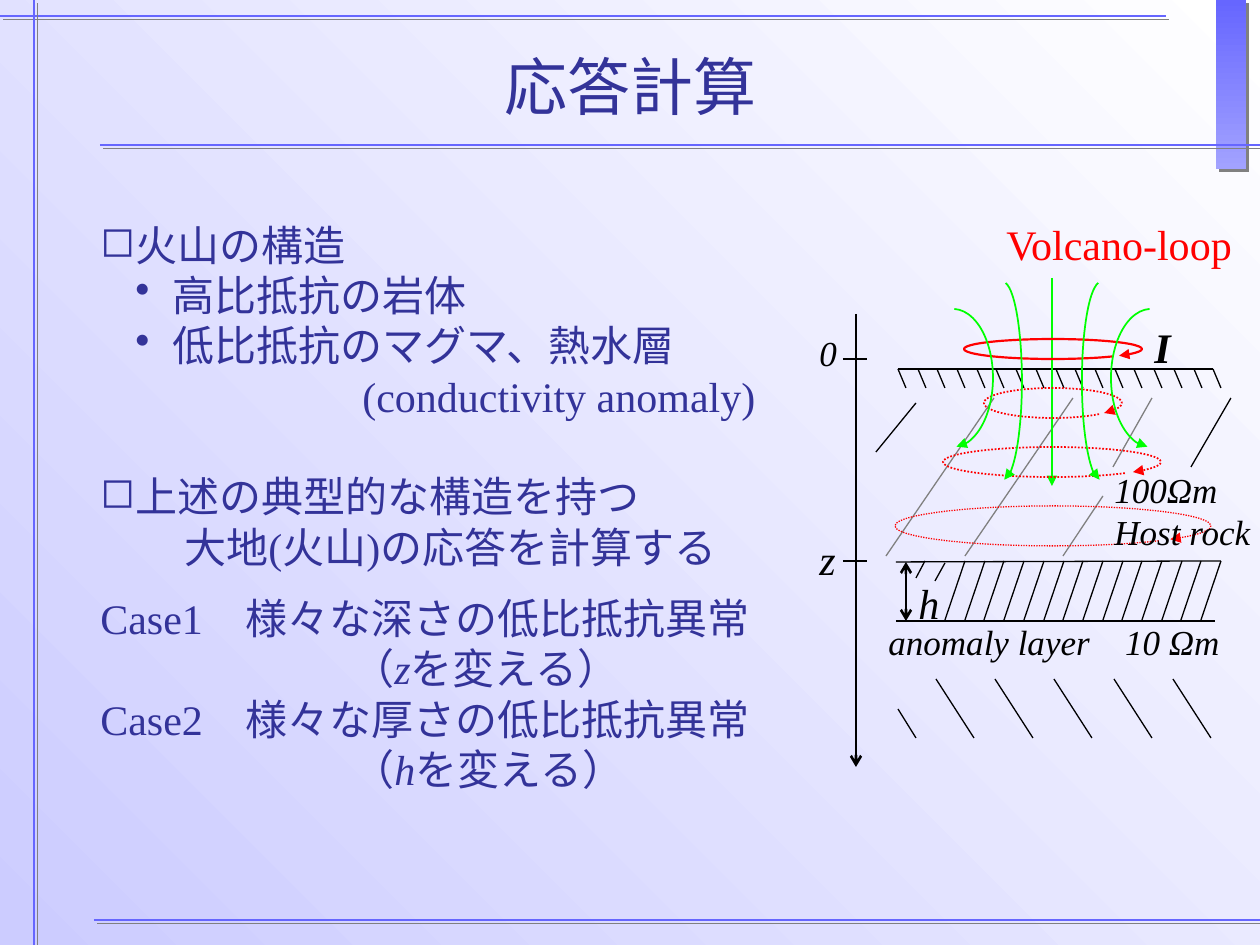
import math

import lxml.etree
import pptx
import pptx.util
from pptx.dml.color import RGBColor
from pptx.enum.dml import MSO_LINE
from pptx.enum.shapes import MSO_CONNECTOR, MSO_SHAPE
from pptx.enum.text import MSO_ANCHOR, PP_ALIGN
from pptx.oxml.ns import qn

PX = 914400 // 126
THEME = {
    "ink": RGBColor(0x33, 0x33, 0x99),
    "black": RGBColor(0, 0, 0),
    "gray": RGBColor(0x80, 0x80, 0x80),
    "red": RGBColor(0xFF, 0, 0),
    "green": RGBColor(0, 0xFF, 0),
    "accent": RGBColor(0x66, 0x66, 0xFF),
    "accent_light": RGBColor(0xA2, 0xA2, 0xFF),
    "mist": RGBColor(0xCC, 0xCC, 0xFF),
    "white": RGBColor(0xFF, 0xFF, 0xFF),
    "title": 36, "body": 24, "label": 20,
    "title_font": "Arial", "font": "Times New Roman",
}


def finish(shape, colour=None, width=0.75, dash=None, head=None, tail=None, shadow=False):
    """Style an outline, its arrowheads and its shadow."""
    if colour:
        shape.line.color.rgb = THEME[colour]
        shape.line.width = pptx.util.Pt(width)
        if dash:
            shape.line.dash_style = dash
    else:
        shape.line.fill.background()
    properties = shape._element.spPr
    outline = properties.find(qn("a:ln"))
    for end, kind in (("a:headEnd", head), ("a:tailEnd", tail)):
        if kind:
            lxml.etree.SubElement(outline, qn(end), type=kind)
    effects = lxml.etree.SubElement(properties, qn("a:effectLst"))
    if shadow:
        cast = lxml.etree.SubElement(effects, qn("a:outerShdw"), blurRad="0", dist="35921",
                                     dir="2700000", algn="ctr", rotWithShape="0")
        lxml.etree.SubElement(cast, qn("a:srgbClr"), val=str(THEME["gray"]))


def write(paragraph, text, **values):
    """Add a run in the slide's font with the given format values."""
    run = paragraph.add_run()
    run.text = text
    colour = values.pop("colour", "ink")
    run.font.color.rgb = THEME[colour]
    size = values.pop("size", "body")
    for name, value in {"name": THEME["font"], "size": pptx.util.Pt(THEME[size]), **values}.items():
        setattr(run.font, name, value)


deck = pptx.Presentation()
deck.slide_width, deck.slide_height = 1260 * PX, 945 * PX
slide = deck.slides.add_slide(deck.slide_layouts[5])
shapes = slide.shapes

# Background and frame
corner_bar = shapes.add_shape(MSO_SHAPE.RECTANGLE, 1216 * PX, 0, 30 * PX, 169 * PX)
for fill, angle, colours in (
    (slide.background.fill, 45, ("mist", "white")),
    (corner_bar.fill, 270, ("accent", "accent_light")),
):
    fill.gradient()
    fill.gradient_angle = angle
    for stop, position, colour in zip(fill.gradient_stops, (0, 1), colours):
        stop.position = position
        stop.color.rgb = THEME[colour]
finish(corner_bar, shadow=True)

# Title
title = shapes.title
for name, value in {"left": 63, "top": 6, "width": 1134, "height": 158}.items():
    setattr(title, name, value * PX)
title.text_frame.vertical_anchor = MSO_ANCHOR.MIDDLE
heading = title.text_frame.paragraphs[0]
heading.alignment = PP_ALIGN.CENTER
write(heading, "応答計算", size="title", name=THEME["title_font"])

# Outline: runs, left margin, bullet, bullet hang, space before
outline_text = [
    (["火山の構造"], 30, "◻", 30, 0),
    (["高比抵抗の岩体"], 72, "•", 37, 0),
    (["低比抵抗のマグマ、熱水層"], 72, "•", 37, 0),
    (["(conductivity anomaly)"], 262, None, 0, 0),
    (["上述の典型的な構造を持つ"], 30, "◻", 30, 28.5),
    (["大地(火山)の応答を計算する"], 84, None, 0, 0),
    (["Case1　様々な深さの低比抵抗異常"], 0, None, 0, 12),
    (["（", "z", "を変える）"], 252, None, 0, 0),
    (["Case2　様々な厚さの低比抵抗異常"], 0, None, 0, 0),
    (["（", "h", "を変える）"], 252, None, 0, 0),
]
body = shapes.add_textbox(88 * PX, 213 * PX, 728 * PX, 645 * PX).text_frame
body.word_wrap = True
for row, (pieces, margin, bullet, hang, before) in enumerate(outline_text):
    paragraph = body.add_paragraph() if row else body.paragraphs[0]
    paragraph.space_before = pptx.util.Pt(before)
    layout = paragraph._p.get_or_add_pPr()
    layout.set("marL", str(margin * PX))
    layout.set("indent", str(-hang * PX))
    if bullet:
        lxml.etree.SubElement(layout, qn("a:buChar"), char=bullet)
    for piece in pieces:
        write(paragraph, piece, italic=piece in ("z", "h"))

# Straight lines, grouped by style
surface_ticks = [(898 + 19.7 * k, 369, 906 + 19.7 * k, 388) for k in range(17)]
layer_hatch = [(965 + 19.7 * k, 561, 945 + 19.7 * k, 620) for k in range(14)]
deep_hatch = [(936 + 59.2 * k, 679, 974 + 59.2 * k, 738) for k in range(5)]
boundaries = [(898, 369, 1213, 369), (896, 562, 1221, 561), (896, 621, 1215, 621)]
depth_marks = [(843, y, 867, y) for y in (359, 561)]
stray_hatch = [(945, 563, 935, 581), (925, 561, 916, 578), (898, 709, 916, 738),
               (1191, 467, 1231, 398), (876, 452, 916, 403)]
host_hatch = [(886, 556, 994, 398), (965, 556, 1073, 398),
              (1063, 556, 1103, 496), (1113, 467, 1152, 398)]
frame_rules = [(0, 16, 1166, 16), (100, 145, 1265, 145), (94, 920, 1260, 920), (34, 0, 34, 945)]
line_groups = [
    (frame_rules, dict(colour="accent", width=1, shadow=True)),
    (boundaries + depth_marks + surface_ticks + layer_hatch + deep_hatch + stray_hatch,
     dict(colour="black")),
    (host_hatch, dict(colour="gray")),
    ([(856, 314, 856, 767)], dict(colour="black", width=1.5, tail="arrow")),
    ([(906, 562, 906, 621)], dict(colour="black", width=1.5, head="arrow", tail="arrow")),
    ([(1052, 278, 1052, 486)], dict(colour="green", width=1, tail="triangle")),
]
for lines, style in line_groups:
    for ends in lines:
        finish(shapes.add_connector(MSO_CONNECTOR.STRAIGHT, *(round(e) * PX for e in ends)), **style)

# Arcs: centre, radii, start and end as angles on the unit circle, style
current = dict(colour="red", tail="triangle")
dotted = dict(current, dash=MSO_LINE.ROUND_DOT)
field = dict(colour="green", width=1)
arcs = [
    (1053, 526, 158, 20, 48, 42, dict(dotted, width=0.75)),
    (1052, 462, 109, 15, 48, 42, dict(dotted, width=1)),
    (1053, 403, 69, 15, 48, 42, dict(dotted, width=1)),
    (1053, 349, 89, 10, 48, 42, dict(current, width=1.25)),
]
for offset, y, rx, ry, first, last in ((99, 378, 40, 69, -88, 85), (49, 381, 19, 99, -82, 86)):
    arcs += [
        (1052 - offset, y, rx, ry, first, last, dict(field, tail="triangle")),
        (1052 + offset, y, rx, ry, 180 - last, 180 - first, dict(field, head="triangle")),
    ]
for x, y, rx, ry, first, last, style in arcs:
    arc = shapes.add_shape(MSO_SHAPE.ARC, (x - rx) * PX, (y - ry) * PX, 2 * rx * PX, 2 * ry * PX)
    arc.fill.background()
    for index, turn in enumerate((first, last)):
        angle = math.radians(turn)
        seen = math.degrees(math.atan2(ry * math.sin(angle), rx * math.cos(angle)))
        arc.adjustments[index] = seen % 360 * 0.6
    finish(arc, **style)

# Labels: lines, left, top, width, height, format
small = dict(colour="black", size="label", italic=True)
large = dict(colour="black", italic=True)
labels = [
    (["100Ωm", "Host rock"], 1102, 462, 186, 97, small),
    (["h"], 906, 571, 69, 63, large),
    (["anomaly layer　10 Ωm"], 876, 614, 380, 55, small),
    (["z"], 807, 527, 59, 63, large),
    (["0"], 807, 325, 49, 55, small),
    (["Volcano-loop"], 994, 212, 266, 63, dict(colour="red")),
    (["I"], 1142, 315, 49, 63, dict(large, bold=True)),
]
for lines, left, top, width, height, values in labels:
    label = shapes.add_textbox(left * PX, top * PX, width * PX, height * PX).text_frame
    label.word_wrap = True
    for row, text in enumerate(lines):
        write(label.add_paragraph() if row else label.paragraphs[0], text, **values)

deck.save("out.pptx")
